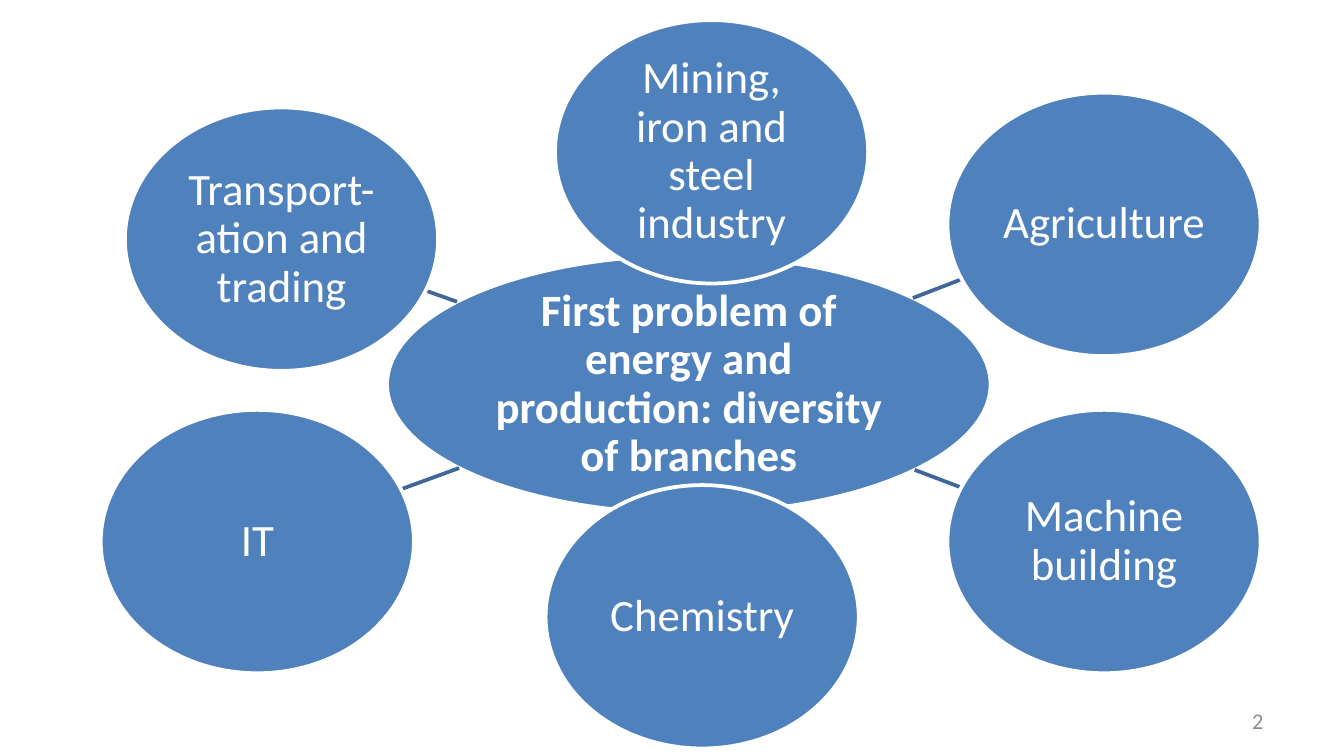
import math

import pptx
import pptx.dml.color
import pptx.enum.shapes
import pptx.enum.text
import pptx.oxml.ns
import pptx.util
from lxml import etree
from pptx.util import Inches

FONT = "Calibri"
BLUE, SPOKE_BLUE, WHITE, GRAY = "4F81BD", "3F6797", "FFFFFF", "8C8C8C"

# Ellipses as left, top, width, height in inches
HUB = (2.88, 1.9, 4.49, 1.92)
BRANCH_SIZE = (2.33, 1.96)
BRANCHES = [
    ("Mining, iron and steel industry", 4.13, 0.15),
    ("Agriculture", 7.05, 0.69),
    ("Machine building", 7.05, 3.05),
    ("Chemistry", 4.06, 3.61),
    ("IT", 0.75, 3.05),
    ("Transport-ation and trading", 0.93, 0.8),
]


def color(value):
    return pptx.dml.color.RGBColor.from_string(value)


def add_run(paragraph, text, size, fill, bold=False):
    run = paragraph.add_run()
    run.text = text
    run.font.name = FONT
    run.font.size = pptx.util.Pt(size)
    run.font.bold = bold
    run.font.color.rgb = color(fill)


def add_bubble(slide, text, box, bold=False):
    bubble = slide.shapes.add_shape(
        pptx.enum.shapes.MSO_SHAPE.OVAL, *map(Inches, box))
    bubble.shadow.inherit = False
    bubble.fill.solid()
    bubble.fill.fore_color.rgb = color(BLUE)
    bubble.line.color.rgb = color(WHITE)
    bubble.line.width = pptx.util.Pt(2)

    frame = bubble.text_frame
    frame.word_wrap = True
    frame.vertical_anchor = pptx.enum.text.MSO_ANCHOR.MIDDLE
    frame.margin_left = frame.margin_right = Inches(0.02)
    frame.margin_top = frame.margin_bottom = Inches(0.02)
    label = frame.paragraphs[0]
    label.alignment = pptx.enum.text.PP_ALIGN.CENTER
    label.line_spacing = 0.9
    add_run(label, text, 24, WHITE, bold)


def center(box):
    left, top, width, height = box
    return left + width / 2, top + height / 2


def edge_toward(box, target):
    """Point where the ellipse in box meets the ray from its center to target."""
    x, y = center(box)
    dx, dy = target[0] - x, target[1] - y
    reach = 1 / math.hypot(dx / (box[2] / 2), dy / (box[3] / 2))
    return x + dx * reach, y + dy * reach


def add_spoke(slide, hub, branch):
    start = edge_toward(hub, center(branch))
    end = edge_toward(branch, center(hub))
    spoke = slide.shapes.add_connector(
        pptx.enum.shapes.MSO_CONNECTOR.STRAIGHT, *map(Inches, start + end))
    spoke.line.color.rgb = color(SPOKE_BLUE)
    spoke.line.width = pptx.util.Pt(2)
    properties = spoke._element.spPr
    etree.SubElement(properties, pptx.oxml.ns.qn("a:effectLst"))


def add_page_number(slide, number):
    footer = slide.shapes.add_textbox(
        Inches(7.17), Inches(5.21), Inches(2.33), Inches(0.3))
    frame = footer.text_frame
    frame.word_wrap = True
    frame.vertical_anchor = pptx.enum.text.MSO_ANCHOR.MIDDLE
    frame.paragraphs[0].alignment = pptx.enum.text.PP_ALIGN.RIGHT
    add_run(frame.paragraphs[0], number, 12, GRAY)


def main():
    deck = pptx.Presentation()
    deck.slide_width = Inches(10)
    deck.slide_height = Inches(10) * 9 // 16  # widescreen 16:9
    slide = deck.slides.add_slide(deck.slide_layouts[6])  # blank layout

    add_page_number(slide, "2")

    # Hub first, then each spoke under its branch
    add_bubble(
        slide,
        "First problem of energy and production: diversity of branches",
        HUB, bold=True)
    for name, left, top in BRANCHES:
        branch = (left, top, *BRANCH_SIZE)
        add_spoke(slide, HUB, branch)
        add_bubble(slide, name, branch)

    deck.save("out.pptx")


if __name__ == "__main__":
    main()
